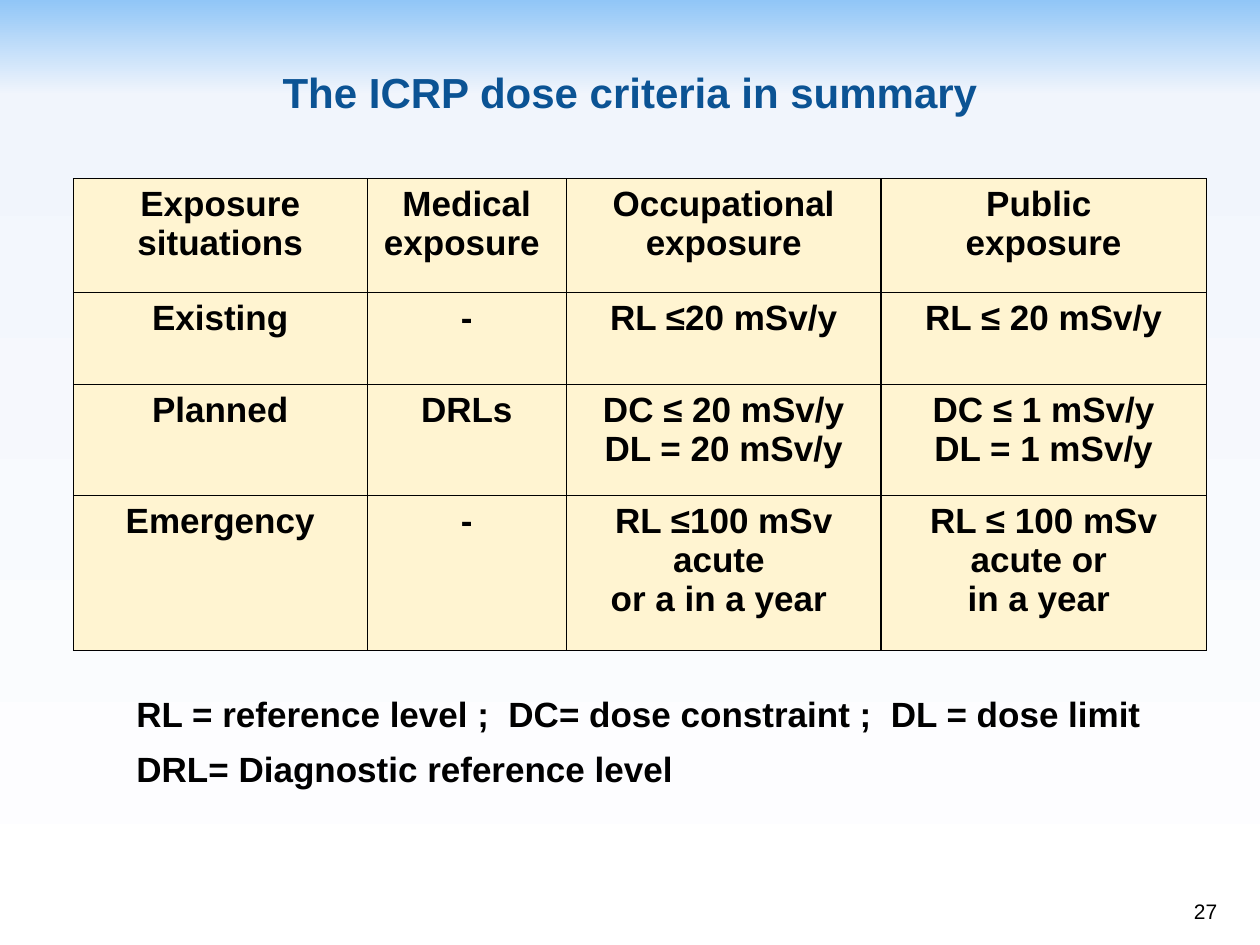
from copy import deepcopy

from lxml.etree import SubElement
from pptx import Presentation
from pptx.dml.color import RGBColor
from pptx.enum.text import MSO_ANCHOR as Anchor, MSO_AUTO_SIZE as Fit, PP_ALIGN as Align
from pptx.oxml.ns import qn
from pptx.util import Cm, Pt

COLS = [5.92, 4.02, 6.34, 6.56]
ROWS = [2.3, 1.85, 2.24, 3.12]
CELLS = [
    ["Exposure situations", "Medical\nexposure ", "Occupational\nexposure", "Public \nexposure"],
    ["Existing", "-", "RL ≤20 mSv/y", "RL ≤ 20 mSv/y"],
    ["Planned", "DRLs", "DC ≤ 20 mSv/y\nDL = 20 mSv/y", "DC ≤ 1 mSv/y\nDL = 1 mSv/y"],
    ["Emergency", "-", "RL ≤100 mSv acute \nor a in a year ",
     "RL ≤ 100 mSv acute or \nin a year "],
]
LEGEND = ("RL = reference level ;  DC= dose constraint ;  DL = dose limit\n"
          "DRL= Diagnostic reference level")


def paint(color):
    return RGBColor.from_string(color)


def write(frame, text, size=20, color="000000", bold=True, align=Align.LEFT,
          spacing=None, gap=0):
    """Fill a frame, one paragraph a line; gap is the space between paragraphs."""
    for i, line in enumerate(text.split("\n")):
        para = frame.add_paragraph() if i else frame.paragraphs[0]
        para.alignment = align
        if spacing:
            para.line_spacing = spacing
        if i and gap:
            para.space_before = Pt(gap)
        run = para.add_run()
        run.text = line
        font = run.font
        font.name, font.size, font.bold = "Arial", Pt(size), bold
        font.color.rgb = paint(color)


def edge(cell, color="000000", width=0.75):
    """Draw a thin line on all four sides of a cell."""
    props = cell._tc.get_or_add_tcPr()
    for side in ("lnL", "lnR", "lnT", "lnB"):
        line = SubElement(props, qn(f"a:{side}"), w=str(Pt(width)))
        fill = SubElement(line, qn("a:solidFill"))
        SubElement(fill, qn("a:srgbClr"), val=color)


class Deck:
    blue = "0B5394"
    cream = "FFF4D1"
    sky = [(0, "91C6F7"), (0.1, "F1F5FC"), (1, "FFFFFF")]

    def __init__(self):
        self.prs = Presentation()
        self.prs.slide_width, self.prs.slide_height = Cm(25.4), Cm(19.05)
        self.slide = self.prs.slides.add_slide(self.prs.slide_layouts[5])

    def backdrop(self):
        fill = self.slide.background.fill
        fill.gradient()
        fill.gradient_angle = 270
        stops = self.slide._element.find(f".//{qn('a:gsLst')}")
        stops.append(deepcopy(stops[-1]))
        for stop, (pos, color) in zip(fill.gradient_stops, self.sky):
            stop.position = pos
            stop.color.rgb = paint(color)

    def title(self, text, x, y, w, h):
        shape = self.slide.shapes.title
        shape.left, shape.top, shape.width, shape.height = map(Cm, (x, y, w, h))
        frame = shape.text_frame
        frame.auto_size = Fit.NONE
        frame.vertical_anchor = Anchor.MIDDLE
        frame.margin_left = frame.margin_right = frame.margin_bottom = 0
        write(frame, text, size=24, color=self.blue, align=Align.CENTER)

    def table(self, cells, x, y, cols, rows):
        box = map(Cm, (x, y, sum(cols), sum(rows)))
        grid = self.slide.shapes.add_table(len(rows), len(cols), *box).table
        for col, width in zip(grid.columns, cols):
            col.width = Cm(width)
        for row, height, texts in zip(grid.rows, rows, cells):
            row.height = Cm(height)
            for cell, text in zip(row.cells, texts):
                edge(cell)
                cell.fill.solid()
                cell.fill.fore_color.rgb = paint(self.cream)
                write(cell.text_frame, text, align=Align.CENTER)

    def label(self, text, x, y, w, h, wrap=True, anchor=Anchor.TOP, left=0.25, **style):
        frame = self.slide.shapes.add_textbox(*map(Cm, (x, y, w, h))).text_frame
        frame.word_wrap = wrap
        frame.vertical_anchor = anchor
        frame.margin_left = Cm(left)
        write(frame, text, **style)


def main():
    deck = Deck()
    deck.backdrop()
    deck.title("The ICRP dose criteria in summary", 0, 0.84, 25.4, 1.9)
    deck.table(CELLS, 1.48, 3.6, COLS, ROWS)
    deck.label(LEGEND, 2.75, 13.76, 20.53, 1.27, wrap=False, left=0, spacing=1.1, gap=5)
    deck.label("27", 19.5, 17.47, 5.29, 1.27, anchor=Anchor.BOTTOM,
               size=12, bold=False, align=Align.RIGHT)
    deck.prs.save("out.pptx")


if __name__ == "__main__":
    main()
